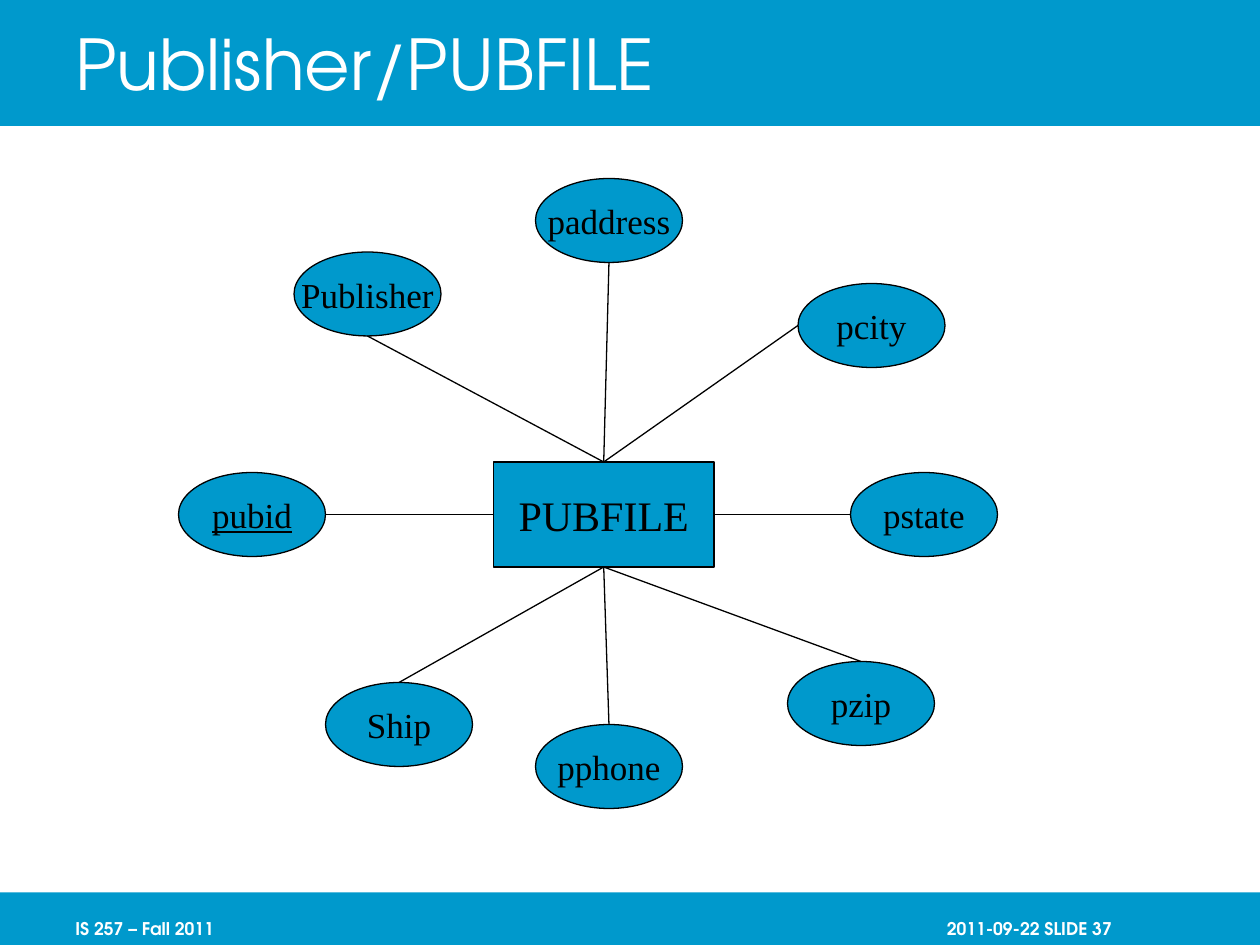
from lxml import etree
from pptx import Presentation
from pptx import util as u
from pptx.dml.color import RGBColor
from pptx.enum import shapes, text
from pptx.oxml import ns

BLUE = RGBColor(0x00, 0x99, 0xCC)
WHITE = RGBColor(0xFF, 0xFF, 0xFF)
BLACK = RGBColor(0x00, 0x00, 0x00)
HEADING_FONT = "TeX Gyre Adventor"
DIAGRAM_FONT = "Times New Roman"

COLUMNS, ROWS = 120, 90
CELL = u.Inches(10) // COLUMNS
OVAL_WIDTH, OVAL_HEIGHT = 14, 8
LINE_WIDTH = u.Pt(0.75)

TOP, LEFT, BOTTOM, RIGHT = range(4)
SIDES = {TOP: (0.5, 0), LEFT: (0, 0.5), BOTTOM: (0.5, 1), RIGHT: (1, 0.5)}

ATTRIBUTES = [
    ("pubid", 17, 45, RIGHT, LEFT),
    ("Ship", 31, 65, TOP, BOTTOM),
    ("Publisher", 28, 24, BOTTOM, TOP),
    ("pphone", 51, 69, TOP, BOTTOM),
    ("pzip", 75, 63, TOP, BOTTOM),
    ("pstate", 81, 45, LEFT, RIGHT),
    ("pcity", 76, 27, LEFT, TOP),
    ("paddress", 51, 17, BOTTOM, TOP),
]


def cells(*counts):
    return [round(count * CELL) for count in counts]


def write(shape, words, font, size, color, align, anchor):
    frame = shape.text_frame
    frame.text = words
    frame.vertical_anchor = anchor
    para = frame.paragraphs[0]
    para.alignment = align
    span = para.runs[0].font
    span.name, span.size = font, u.Pt(size)
    span.color.rgb = color
    return span


def add_filled(page, kind, box):
    shape = page.shapes.add_shape(kind, *cells(*box))
    shape.shadow.inherit = False
    shape.fill.solid()
    shape.fill.fore_color.rgb = BLUE
    return shape


def add_band(page, box):
    add_filled(page, shapes.MSO_SHAPE.RECTANGLE, box).line.fill.background()


def add_label(page, box, words, size, anchor):
    label = page.shapes.add_textbox(*cells(*box))
    label.text_frame.word_wrap = True
    return write(label, words, HEADING_FONT, size, WHITE, text.PP_ALIGN.LEFT, anchor)


def add_header(page, box):
    left, top, width, height = box
    add_band(page, box)
    add_label(page, (left + 6, top, width - 18, height), "Publisher/PUBFILE", 40,
              text.MSO_ANCHOR.MIDDLE)


def add_footer(page, box):
    left, top, width, height = box
    add_band(page, box)
    for words, column in (("IS 257 – Fall 2011", 6), ("2011-09-22 SLIDE 37", 89)):
        span = add_label(page, (left + column, top, 25, height), words, 10,
                         text.MSO_ANCHOR.BOTTOM)
        span.bold = True


def add_node(page, kind, box, words, size):
    node = add_filled(page, kind, box)
    node.line.color.rgb = BLACK
    node.line.width = LINE_WIDTH
    node.text_frame.word_wrap = False
    span = write(node, words, DIAGRAM_FONT, size, BLACK, text.PP_ALIGN.CENTER,
                 text.MSO_ANCHOR.MIDDLE)
    return node, span


def add_link(page, oval, oval_side, entity, entity_side):
    across, down = SIDES[oval_side]
    x = round(oval.left + across * oval.width)
    y = round(oval.top + down * oval.height)
    link = page.shapes.add_connector(shapes.MSO_CONNECTOR.STRAIGHT, x, y, x, y)
    link.end_connect(entity, entity_side)
    link.line.color.rgb = BLACK
    link.line.width = LINE_WIDTH
    etree.SubElement(link.element.spPr, ns.qn("a:effectLst"))


def add_entity_diagram(page, box):
    left, top, width, height = box
    entity, _ = add_node(page, shapes.MSO_SHAPE.RECTANGLE,
                         (left + 47, top + 32, 21, 10), "PUBFILE", 24)
    links = []
    for name, column, row, oval_side, entity_side in ATTRIBUTES:
        place = (left + column, top + row - 12, OVAL_WIDTH, OVAL_HEIGHT)
        oval, span = add_node(page, shapes.MSO_SHAPE.OVAL, place, name, 20)
        span.underline = True if name == "pubid" else None
        links.append((oval, oval_side, entity, entity_side))
    for link in links:
        add_link(page, *link)


def main():
    deck = Presentation()
    deck.slide_width, deck.slide_height = cells(COLUMNS, ROWS)
    page = deck.slides.add_slide(deck.slide_layouts[6])
    add_header(page, (0, 0, COLUMNS, 12))
    add_footer(page, (0, 85, COLUMNS, 5))
    add_entity_diagram(page, (0, 12, COLUMNS, 73))
    deck.save("out.pptx")


if __name__ == "__main__":
    main()
